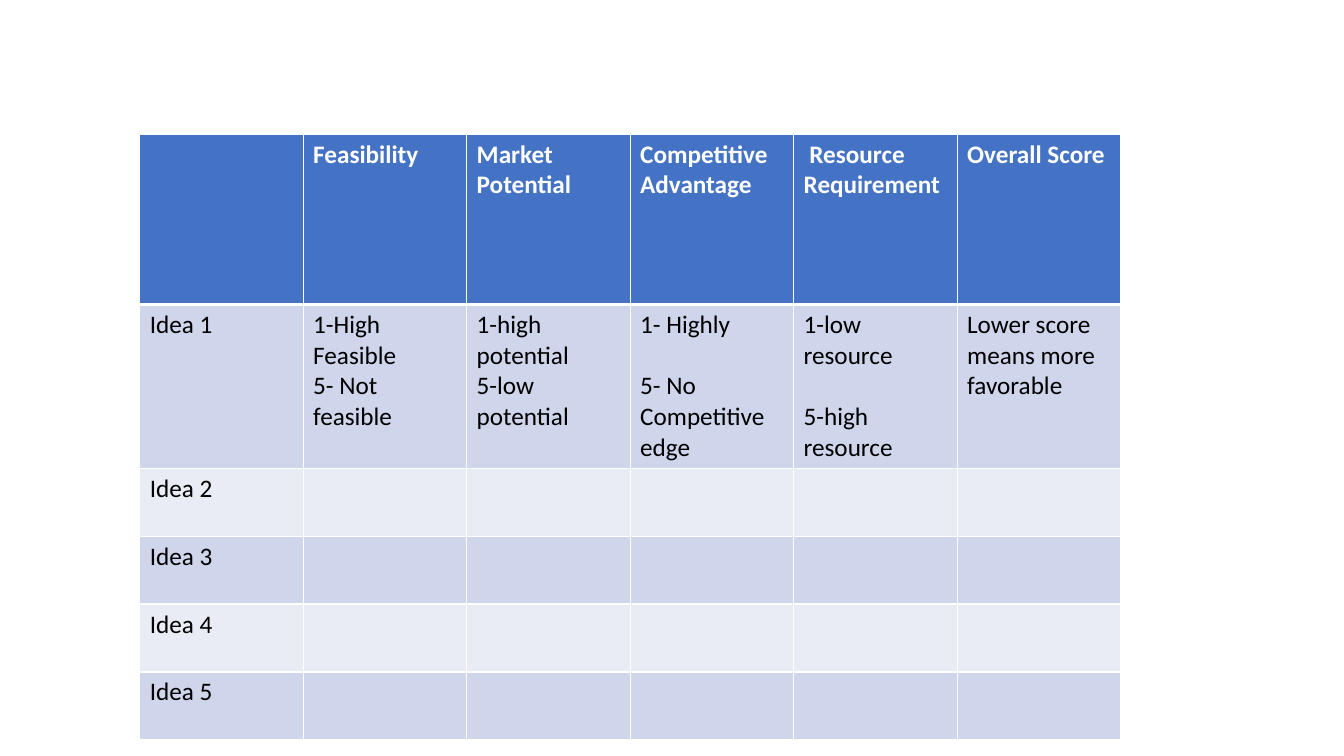
from lxml import etree
from pptx import Presentation
from pptx.dml.color import RGBColor
from pptx.oxml.ns import qn
from pptx.util import Cm, Pt

WHITE = RGBColor(0xFF, 0xFF, 0xFF)
BLACK = RGBColor(0x00, 0x00, 0x00)
HEADER_BLUE = RGBColor(0x44, 0x72, 0xC4)
BAND_DARK = RGBColor(0xCF, 0xD5, 0xEA)
BAND_LIGHT = RGBColor(0xE9, 0xEB, 0xF5)

FONT = "Calibri"
BLANK_LAYOUT = 6
COLUMN_WIDTH = Cm(4.12)
HEADER_HEIGHT = Cm(4.29)
IDEA_HEIGHT = Cm(1.71)
LINE_GAP = 22
THIN, THICK = 1, 3

HEADERS = ["", "Feasibility", "Market Potential", "Competitive Advantage",
           " Resource Requirement", "Overall Score"]
SCALES = [
    (["1-High Feasible", "5- Not feasible"], 0),
    (["1-high potential", "5-low potential"], 0),
    (["1- Highly", "5- No Competitive edge"], LINE_GAP),
    (["1-low resource", "5-high resource"], LINE_GAP),
    (["Lower score means more favorable"], 0),
]
IDEA_COUNT = 5


def write_text(text_frame, lines, size=18, color=BLACK, bold=False, gap=0):
    for index, line in enumerate(lines):
        paragraph = text_frame.paragraphs[0] if index == 0 else text_frame.add_paragraph()
        paragraph.text = line
        paragraph.space_before = Pt(gap if index else 0)
        paragraph.font.name = FONT
        paragraph.font.size = Pt(size)
        paragraph.font.bold = bold
        paragraph.font.color.rgb = color


def set_borders(cell, top, bottom):
    properties = cell._tc.get_or_add_tcPr()
    widths = {"a:lnL": THIN, "a:lnR": THIN, "a:lnT": top, "a:lnB": bottom}
    for tag, width in widths.items():
        line = etree.SubElement(properties, qn(tag), w=str(Pt(width)))
        fill = etree.SubElement(line, qn("a:solidFill"))
        etree.SubElement(fill, qn("a:srgbClr"), val=str(WHITE))


def style_cell(cell, row_index):
    set_borders(cell,
                top=THICK if row_index == 1 else THIN,
                bottom=THICK if row_index == 0 else THIN)
    cell.fill.solid()
    if row_index == 0:
        cell.fill.fore_color.rgb = HEADER_BLUE
    else:
        cell.fill.fore_color.rgb = BAND_DARK if row_index % 2 else BAND_LIGHT


def add_score_table(slide):
    rows, columns = IDEA_COUNT + 1, len(HEADERS)
    table = slide.shapes.add_table(
        rows, columns, Cm(3.52), Cm(3.38), COLUMN_WIDTH * columns,
        HEADER_HEIGHT + IDEA_HEIGHT * IDEA_COUNT).table
    for column in table.columns:
        column.width = COLUMN_WIDTH
    for row_index, row in enumerate(table.rows):
        row.height = IDEA_HEIGHT if row_index else HEADER_HEIGHT
        for cell in row.cells:
            style_cell(cell, row_index)
    return table


def fill_score_table(table):
    for column, header in enumerate(HEADERS):
        write_text(table.cell(0, column).text_frame, [header], color=WHITE, bold=True)
    for number in range(1, IDEA_COUNT + 1):
        write_text(table.cell(number, 0).text_frame, [f"Idea {number}"])
    for column, (lines, gap) in enumerate(SCALES, start=1):
        write_text(table.cell(1, column).text_frame, lines, gap=gap)


def main():
    presentation = Presentation()
    presentation.slide_width = Cm(33.87)
    presentation.slide_height = Cm(19.05)
    slide = presentation.slides.add_slide(presentation.slide_layouts[BLANK_LAYOUT])
    fill_score_table(add_score_table(slide))
    presentation.save("out.pptx")


if __name__ == "__main__":
    main()
